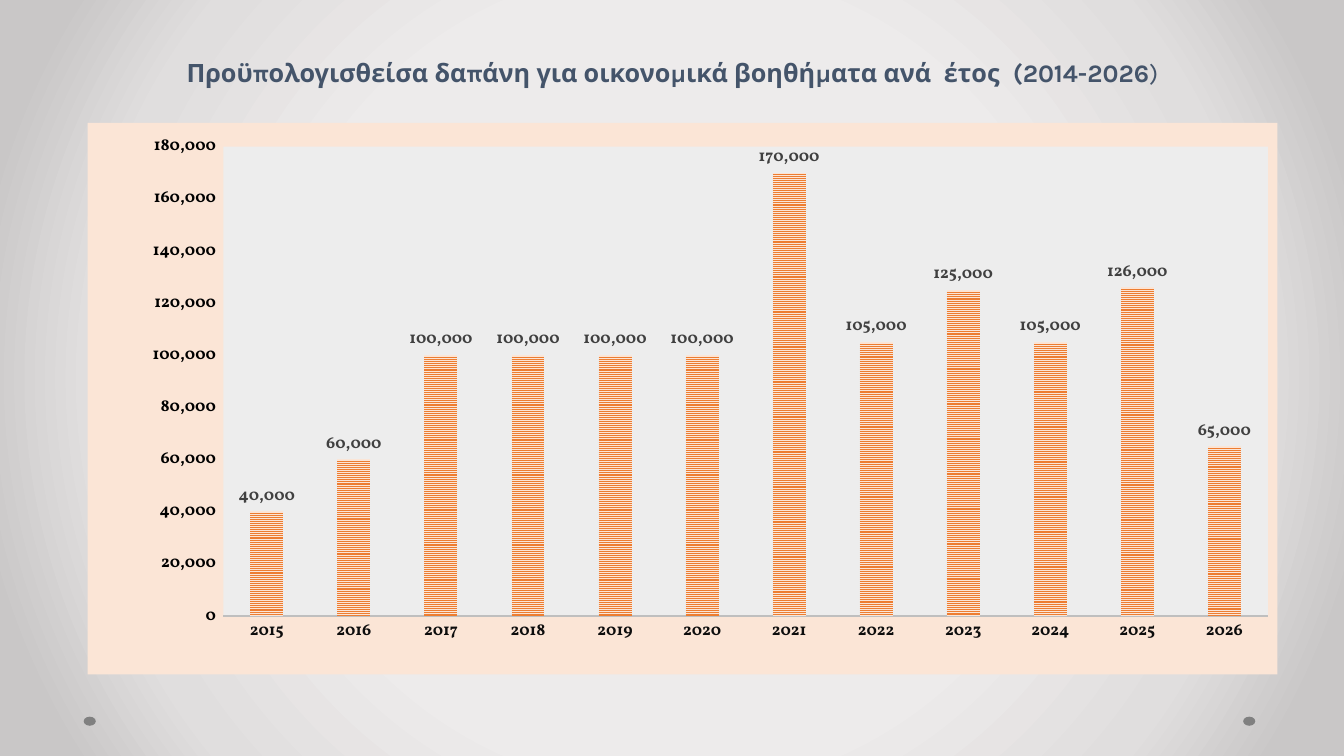
import dataclasses

import pptx
import pptx.chart.data
import pptx.dml.color
import pptx.enum.chart
import pptx.enum.dml
import pptx.enum.shapes
import pptx.enum.text
import pptx.oxml
import pptx.oxml.ns
import pptx.util

Inches, Pt = pptx.util.Inches, pptx.util.Pt
ENUM = pptx.enum.chart
PEACH, ORANGE, PALE = "FBE5D6", "ED7D31", "EDEDED"
SPACES = pptx.oxml.ns.nsdecls("a", "c")
COSTS = {
    2015: 40000, 2016: 60000, 2017: 100000, 2018: 100000,
    2019: 100000, 2020: 100000, 2021: 170000, 2022: 105000,
    2023: 125000, 2024: 105000, 2025: 126000, 2026: 65000,
}


@dataclasses.dataclass
class Dot:
    left: float
    top: float = 7.11
    width: float = 0.12
    height: float = 0.09


@dataclasses.dataclass
class Run:
    text: str
    bold: bool


def color(code: str):
    return pptx.dml.color.RGBColor.from_string(code)


def assign(target, values: dict) -> None:
    for name, value in values.items():
        setattr(target, name, value)


def style(font, face: str, size: float, code: str, bold: bool) -> None:
    assign(font, {"name": face, "size": Pt(size), "bold": bold})
    font.color.rgb = color(code)


def panel(code: str):
    """Fill without outline for a part of the chart."""
    return pptx.oxml.parse_xml(
        f'<c:spPr {SPACES}><a:solidFill><a:srgbClr val="{code}"/></a:solidFill>'
        "<a:ln><a:noFill/></a:ln></c:spPr>")


def paint(slide, stops: dict) -> None:
    """Radial background, from the centre outwards."""
    marks = "".join(
        f'<a:gs pos="{spot * 1000}"><a:srgbClr val="{code}"/></a:gs>'
        for spot, code in stops.items())
    grad = pptx.oxml.parse_xml(
        f'<a:gradFill {SPACES} rotWithShape="1"><a:gsLst>{marks}</a:gsLst>'
        '<a:path path="circle"><a:fillToRect l="50000" t="50000" r="50000" b="50000"/>'
        "</a:path></a:gradFill>")
    slide.background.fill.solid()
    solid = slide._element.find(".//" + pptx.oxml.ns.qn("p:bgPr"))[0]
    solid.getparent().replace(solid, grad)


def draw_dot(slide, dot: Dot) -> None:
    shape = slide.shapes.add_shape(
        pptx.enum.shapes.MSO_SHAPE.OVAL,
        *map(Inches, dataclasses.astuple(dot)))
    shape.shadow.inherit = False
    shape.fill.solid()
    shape.fill.fore_color.rgb = color("808080")
    shape.line.fill.background()


def draw_title(slide, runs: list[Run]) -> None:
    box = slide.shapes.add_textbox(
        Inches(0.67), Inches(0.43), Inches(12), Inches(0.49))
    frame = box.text_frame
    assign(frame, {"word_wrap": True,
                   "vertical_anchor": pptx.enum.text.MSO_ANCHOR.BOTTOM})
    line = frame.paragraphs[0]
    assign(line, {"alignment": pptx.enum.text.PP_ALIGN.CENTER,
                  "line_spacing": Pt(48)})
    for part in runs:
        run = line.add_run()
        run.text = part.text
        style(run.font, "Karla", 18, "44546A", part.bold)


def draw_chart(slide, costs: dict[int, int]) -> None:
    data = pptx.chart.data.CategoryChartData()
    data.categories = [str(year) for year in costs]
    data.add_series("Series 1", list(costs.values()))
    chart = slide.shapes.add_chart(
        ENUM.XL_CHART_TYPE.COLUMN_CLUSTERED, Inches(0.87), Inches(1.22),
        Inches(11.8), Inches(5.47), data).chart
    assign(chart, {"has_title": False, "has_legend": False})
    style(chart.font, "Vollkorn", 10, "000000", False)

    # Columns and their labels
    plot = chart.plots[0]
    assign(plot, {"gap_width": 164, "overlap": -22,
                  "vary_by_categories": False, "has_data_labels": True})
    bars = plot.series[0]
    bars.invert_if_negative = False
    fill = bars.format.fill
    fill.patterned()
    fill.pattern = pptx.enum.dml.MSO_PATTERN.NARROW_HORIZONTAL
    fill.fore_color.rgb = color(ORANGE)
    fill.back_color.rgb = color(PEACH)
    assign(plot.data_labels, {
        "show_value": True, "number_format": "#,##0",
        "number_format_is_linked": False,
        "position": ENUM.XL_LABEL_POSITION.OUTSIDE_END})
    style(plot.data_labels.font, "Vollkorn", 12, "404040", True)

    # Axes
    years, sums = chart.category_axis, chart.value_axis
    for axis, code in ((years, "0D0D0D"), (sums, "000000")):
        assign(axis, {"has_major_gridlines": False,
                      "major_tick_mark": ENUM.XL_TICK_MARK.NONE,
                      "minor_tick_mark": ENUM.XL_TICK_MARK.NONE})
        style(axis.tick_labels.font, "Vollkorn", 12, code, True)
    years.format.line.color.rgb = color("BFBFBF")
    years.format.line.width = Pt(1.5)
    sums.format.line.fill.background()
    assign(sums, {"minimum_scale": 0, "maximum_scale": 180000,
                  "major_unit": 20000})
    assign(sums.tick_labels, {"number_format": r"#,##0_ ;[Red]\-#,##0\ ",
                              "number_format_is_linked": False})

    # Panels and inner plot layout
    root = chart._chartSpace
    root.chart.addnext(panel(PEACH))
    area = root.chart.plotArea
    area.append(panel(PALE))
    for old in area.findall(pptx.oxml.ns.qn("c:layout")):
        area.remove(old)
    place = {"xMode": "edge", "yMode": "edge",
             "x": 0.114, "y": 0.043, "w": 0.878, "h": 0.851}
    parts = "".join(f'<c:{key} val="{value}"/>' for key, value in place.items())
    area.insert(0, pptx.oxml.parse_xml(
        f'<c:layout {SPACES}><c:manualLayout><c:layoutTarget val="inner"/>'
        f"{parts}</c:manualLayout></c:layout>"))


def main() -> None:
    deck = pptx.Presentation()
    assign(deck, {"slide_width": Inches(13.33), "slide_height": Inches(7.5)})
    slide = deck.slides.add_slide(deck.slide_layouts[6])
    paint(slide, {50: "EDEBEB", 76: "E0DEDE", 92: "C9C7C7"})
    for dot in (Dot(12.33), Dot(0.83)):
        draw_dot(slide, dot)
    draw_title(slide, [
        Run("Προϋπολογισθείσα δαπάνη για οικονομικά βοηθήματα ανά  έτος  (2014-2026", True),
        Run(")", False)])
    draw_chart(slide, COSTS)
    deck.save("out.pptx")


if __name__ == "__main__":
    main()
